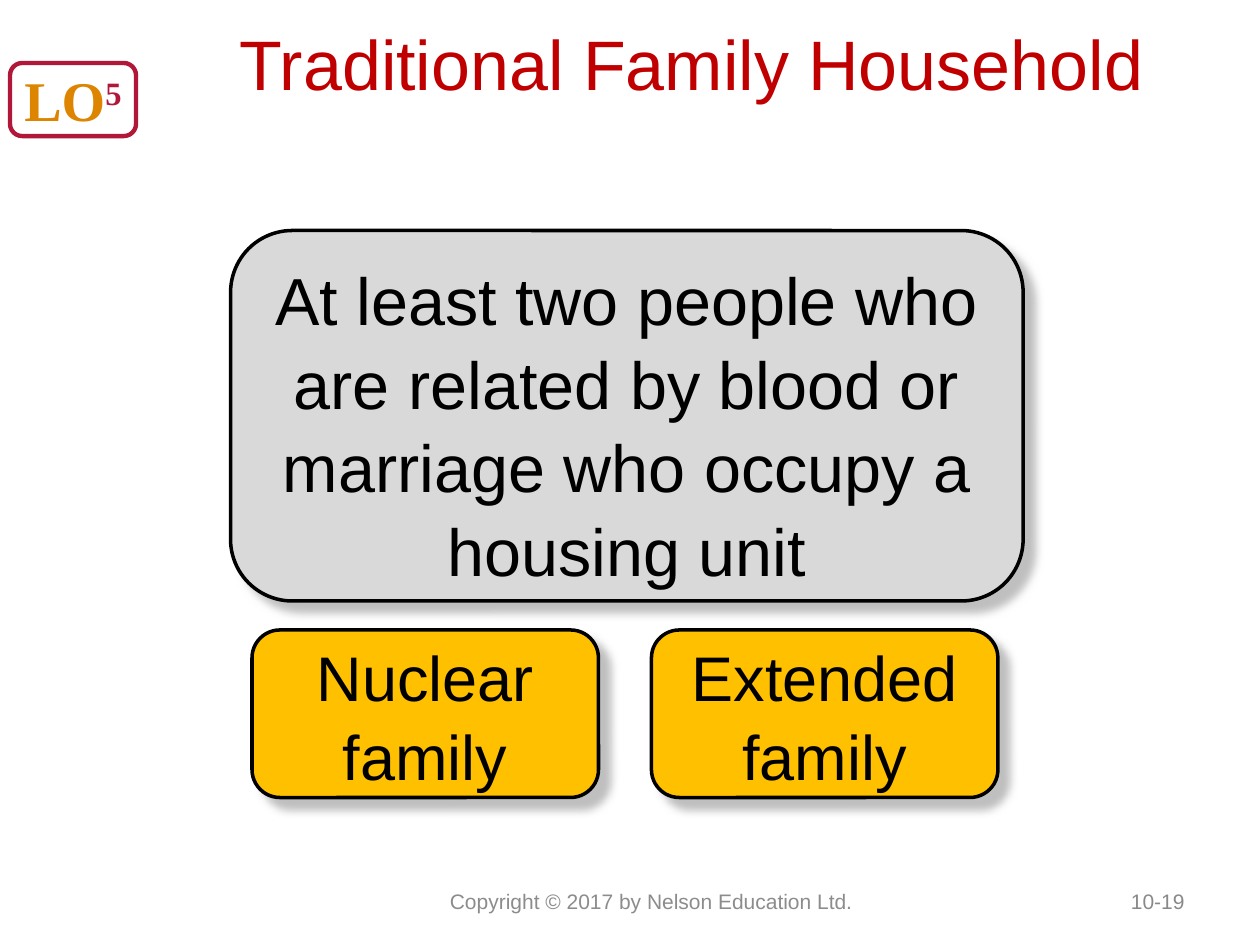
"""Build the Traditional Family Household slide."""
from lxml.etree import SubElement
from pptx import Presentation
from pptx.dml.color import RGBColor
from pptx.enum.shapes import MSO_SHAPE as Shape
from pptx.enum.text import MSO_ANCHOR as Anchor, PP_ALIGN as Align
from pptx.oxml.ns import qn
from pptx.util import Inches, Pt

THEME = {
    "sans": "Arial", "serif": "Times New Roman",
    "title": "C00000", "ink": "000000", "gray": "D9D9D9", "gold": "FFC000",
    "paper": "FFFFFF", "badge": "B11738", "badge_text": "DD8401",
    "number": "898989", "copyright": "8C8C8C", "shadow": "808080",
    "title_size": 40, "definition_size": 38, "type_size": 36,
    "badge_size": 32, "footer_size": 12,
}

TITLE = "Traditional Family Household"
DEFINITION = ("At least two people who are related by blood or marriage "
              "who occupy a housing unit")
FAMILY_TYPES = ["Nuclear family", "Extended family"]
BADGE = ("LO", "5")
FOOTERS = [
    ("10-19", (7.17, 6.95, 2.33, 0.4), Align.RIGHT, "number"),
    ("Copyright © 2017 by Nelson Education Ltd.", (3.42, 6.95, 3.5, 0.4),
     Align.CENTER, "copyright"),
]
TYPE_LEFT, TYPE_TOP, TYPE_WIDTH, TYPE_HEIGHT, TYPE_GAP = 2, 5, 2.75, 1.33, 0.42


def color(name):
    return RGBColor.from_string(THEME[name])


def style(span, size, ink, face="sans"):
    span.font.name = THEME[face]
    span.font.size = Pt(THEME[size])
    span.font.color.rgb = color(ink)


def write(box, text, size, ink, align, anchor=Anchor.MIDDLE):
    frame = box.text_frame
    frame.word_wrap = True
    frame.vertical_anchor = anchor
    frame.text = text
    para = frame.paragraphs[0]
    para.alignment = align
    style(para.runs[0], size, ink)
    return para


def add_box(page, place, fill, line, width):
    box = page.shapes.add_shape(Shape.ROUNDED_RECTANGLE, *map(Inches, place))
    box.shadow.inherit = False
    box.fill.solid()
    box.fill.fore_color.rgb = color(fill)
    box.line.color.rgb = color(line)
    box.line.width = Pt(width)
    return box


def add_shadow(box):
    effects = box._element.spPr.find(qn("a:effectLst"))
    shadow = SubElement(effects, qn("a:outerShdw"), blurRad=str(Pt(5)),
                        dist=str(Pt(8.5)), dir=str(45 * 60000),
                        algn="ctr", rotWithShape="0")
    tint = SubElement(shadow, qn("a:srgbClr"), val=THEME["shadow"])
    SubElement(tint, qn("a:alpha"), val="50000")


def add_card(page, place, text, fill, size, anchor=Anchor.MIDDLE):
    card = add_box(page, place, fill, "ink", 2)
    add_shadow(card)
    para = write(card, text, size, "ink", Align.CENTER, anchor)
    para.line_spacing = 1.05


def add_badge(page):
    badge = add_box(page, (0.08, 0.5, 1, 0.58), "paper", "badge", 2.5)
    frame = badge.text_frame
    frame.word_wrap = False
    frame.vertical_anchor = Anchor.MIDDLE
    para = frame.paragraphs[0]
    para.alignment = Align.CENTER
    for text, ink in zip(BADGE, ("badge_text", "badge")):
        span = para.add_run()
        span.text = text
        style(span, "badge_size", ink, "serif")
        span.font.bold = True
    span.font._element.set("baseline", "30000")


def main():
    deck = Presentation()
    deck.slide_width, deck.slide_height = Inches(10), Inches(7.5)
    page = deck.slides.add_slide(deck.slide_layouts[5])

    title = page.shapes.title
    title.left, title.top, title.width, title.height = map(
        Inches, (0.75, -0.17, 8.42, 1.33))
    write(title, TITLE, "title_size", "title", Align.RIGHT)

    add_card(page, (1.83, 1.83, 6.29, 2.94), DEFINITION, "gray",
             "definition_size", Anchor.TOP)
    add_badge(page)
    for index, name in enumerate(FAMILY_TYPES):
        left = TYPE_LEFT + index * (TYPE_WIDTH + TYPE_GAP)
        add_card(page, (left, TYPE_TOP, TYPE_WIDTH, TYPE_HEIGHT), name,
                 "gold", "type_size")
    for text, place, align, ink in FOOTERS:
        box = page.shapes.add_textbox(*map(Inches, place))
        write(box, text, "footer_size", ink, align)

    deck.save("out.pptx")


if __name__ == "__main__":
    main()
